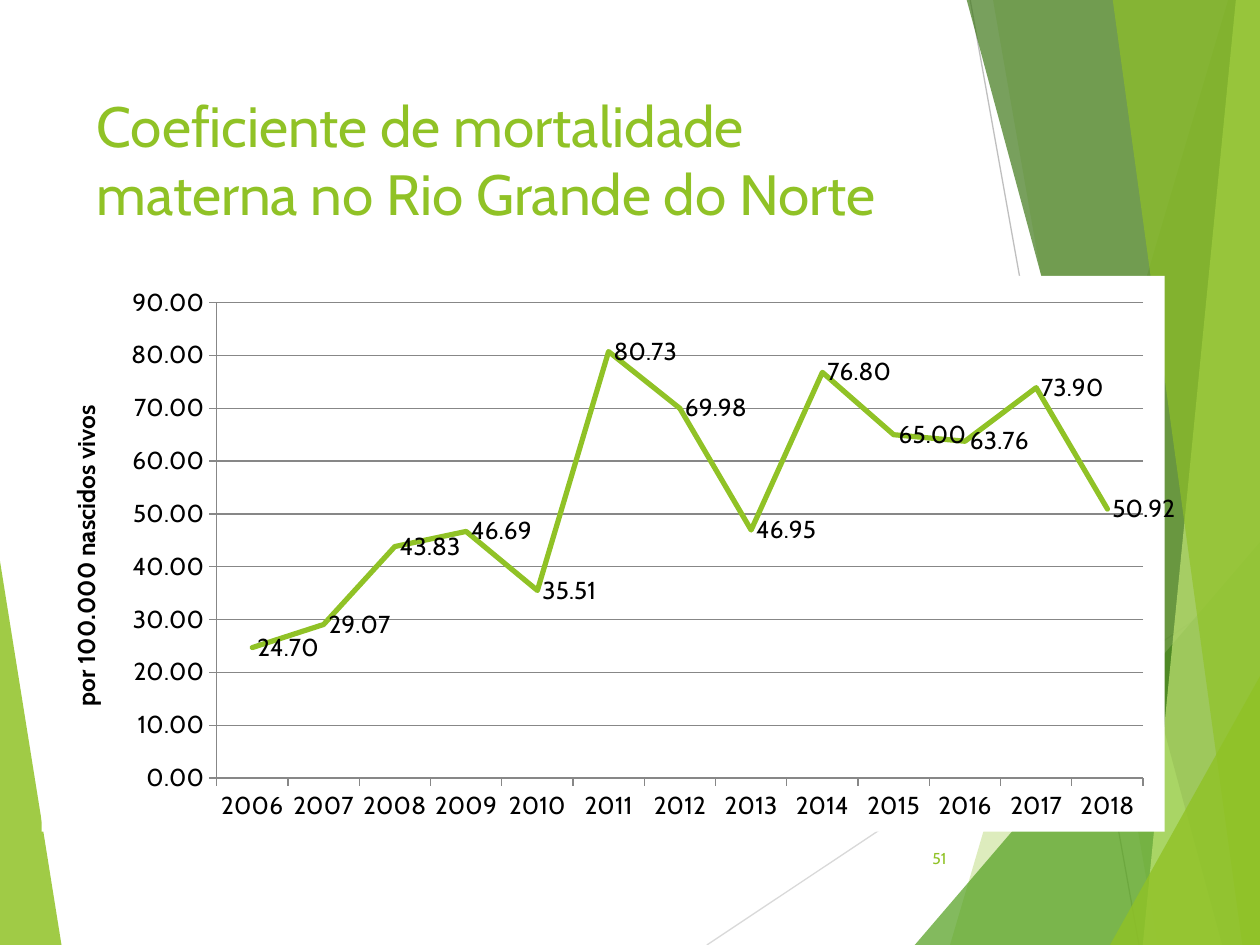
from lxml import etree
from pptx import Presentation
from pptx.chart.data import CategoryChartData as ChartData
from pptx.dml.color import RGBColor as RGB
from pptx.enum.chart import XL_CHART_TYPE as ChartType
from pptx.enum.chart import XL_LABEL_POSITION as LabelPos
from pptx.enum.chart import XL_MARKER_STYLE as Marker
from pptx.enum.chart import XL_TICK_MARK as Tick
from pptx.enum.shapes import MSO_CONNECTOR as Connector
from pptx.enum.text import MSO_ANCHOR as Anchor
from pptx.enum.text import PP_ALIGN as Align
from pptx.oxml import parse_xml
from pptx.oxml.ns import nsdecls, qn
from pptx.util import Inches, Pt

COLORS = {
    "lime": "90C226", "green": "54A021", "forest": "3F7819", "pale": "C0E474",
    "light_gray": "D9D9D9", "mid_gray": "BFBFBF", "axis": "878787",
    "white": "FFFFFF", "black": "000000",
}


class SlideBuilder:
    font = "Cabin"

    def __init__(self, slide):
        self.slide = slide
        self.shapes = slide.shapes

    def color(self, name):
        return RGB.from_string(COLORS[name])

    def facet(self, points, color, opacity):
        """Translucent polygon without outline."""
        corners = [(Inches(x), Inches(y)) for x, y in points]
        builder = self.shapes.build_freeform(*corners[0])
        builder.add_line_segments(corners[1:], close=True)
        facet = builder.convert_to_shape()
        facet.shadow.inherit = False
        facet.line.fill.background()
        facet.fill.solid()
        facet.fill.fore_color.rgb = self.color(color)
        tint = facet.fill._xPr.find(".//" + qn("a:srgbClr"))
        etree.SubElement(tint, qn("a:alpha")).set("val", str(opacity * 1000))

    def line(self, start, end, color):
        ends = [Inches(v) for v in (*start, *end)]
        line = self.shapes.add_connector(Connector.STRAIGHT, *ends)
        line.line.color.rgb = self.color(color)
        line.line.width = Pt(0.75)
        etree.SubElement(line._element.spPr, qn("a:effectLst"))

    def text(self, words, box, size, color, align=Align.LEFT, anchor=Anchor.TOP):
        frame = self.shapes.add_textbox(*[Inches(v) for v in box]).text_frame
        frame.word_wrap = True
        frame.vertical_anchor = anchor
        paragraph = frame.paragraphs[0]
        paragraph.alignment = align
        run = paragraph.add_run()
        run.text = words
        self.style(run.font, size, color)

    def style(self, font, size, color, bold=False):
        font.name, font.size, font.bold = self.font, Pt(size), bold
        font.color.rgb = self.color(color)

    def line_chart(self, points, box, axis_title, plot_area):
        data = ChartData(number_format="0.00")
        data.categories = list(points)
        data.add_series("Series 1", list(points.values()))
        chart = self.shapes.add_chart(
            ChartType.LINE, *[Inches(v) for v in box], data).chart
        chart.has_legend = chart.has_title = False
        self.style(chart.font, 14, "black")

        # Axes
        years, rates = chart.category_axis, chart.value_axis
        for axis in (years, rates):
            axis.major_tick_mark, axis.minor_tick_mark = Tick.OUTSIDE, Tick.NONE
            axis.format.line.color.rgb = self.color("axis")
            axis.format.line.width = Pt(0.75)
        rates.minimum_scale, rates.maximum_scale, rates.major_unit = 0, 90, 10
        rates.tick_labels.number_format = "0.00"
        rates.tick_labels.number_format_is_linked = False
        rates.major_gridlines.format.line.color.rgb = self.color("axis")
        rates.major_gridlines.format.line.width = Pt(0.75)
        title_run = rates.axis_title.text_frame.paragraphs[0].add_run()
        title_run.text = axis_title
        self.style(title_run.font, 14, "black", bold=True)

        # Series and its labels
        plot = chart.plots[0]
        plot.vary_by_categories = False
        series = plot.series[0]
        series.smooth = False
        series.marker.style = Marker.NONE
        series.format.line.color.rgb = self.color("lime")
        series.format.line.width = Pt(3)
        series.format.line._ln.set("cap", "rnd")
        labels = series.data_labels
        labels.show_value = True
        labels.position = LabelPos.RIGHT
        labels.number_format, labels.number_format_is_linked = "0.00", False
        self.style(labels.font, 14, "black")

        # Plot area position and white background
        area = chart._chartSpace.chart.plotArea
        for layout in area.findall(qn("c:layout")):
            area.remove(layout)
        settings = {"layoutTarget": "inner", "xMode": "edge", "yMode": "edge",
                    **plot_area}
        inner = "".join(f'<c:{k} val="{v}"/>' for k, v in settings.items())
        area.insert(0, parse_xml(
            f'<c:layout {nsdecls("c")}><c:manualLayout>{inner}'
            '</c:manualLayout></c:layout>'))
        chart._chartSpace.chart.addnext(parse_xml(
            f'<c:spPr {nsdecls("c", "a")}><a:solidFill><a:srgbClr '
            f'val="{COLORS["white"]}"/></a:solidFill><a:ln><a:noFill/></a:ln></c:spPr>'))


def main():
    deck = Presentation()
    deck.slide_width, deck.slide_height = Inches(10), Inches(7.5)
    page = SlideBuilder(deck.slides.add_slide(deck.slide_layouts[6]))

    # Background facets
    page.facet([(-0.01, 4.39), (0.49, 7.51), (-0.01, 7.5)], "lime", 85)
    page.line((5.61, 7.5), (10.01, 4.57), "light_gray")
    page.line((7.7, 0), (9.04, 7.5), "mid_gray")
    right, top, bottom = 10.01, -0.01, 7.5
    # Full-height bands: top left x, bottom left x, colour, opacity
    bands = [(9.75, 7.54, "lime", 30), (7.88, 9.19, "lime", 20),
             (7.67, 9.7, "forest", 70), (9.81, 9.07, "pale", 70),
             (8.83, 9.86, "lime", 65)]
    # Corner triangles: bottom left x, right edge y, colour, opacity
    low_corner = (7.26, 4.29, "green", 72)
    front_corner = (8.81, 5.35, "lime", 80)

    def add_band(top_x, bottom_x, color, opacity):
        page.facet([(top_x, top), (bottom_x, bottom), (right, bottom),
                    (right, top)], color, opacity)

    def add_corner(bottom_x, edge_y, color, opacity):
        page.facet([(bottom_x, bottom), (right, edge_y), (right, bottom)],
                   color, opacity)

    for band in bands[:2]:
        add_band(*band)
    add_corner(*low_corner)
    for band in bands[2:]:
        add_band(*band)
    add_corner(*front_corner)

    # Title and page number
    page.text("Coeficiente de mortalidade materna no Rio Grande do Norte",
              (0.67, 0.67, 6.94, 1.44), 32.4, "lime")
    page.text("51", (7.05, 6.61, 0.56, 0.4), 9, "lime", Align.RIGHT, Anchor.MIDDLE)

    # Maternal mortality by year
    rates = [24.7, 29.07, 43.83, 46.69, 35.51, 80.73, 69.98, 46.95, 76.8, 65,
             63.76, 73.9, 50.92]
    mortality = {str(year): rate for year, rate in enumerate(rates, 2006)}
    page.line_chart(mortality, (0.33, 2.19, 9, 4.41), "por 100.000 nascidos vivos",
                    {"x": 0.156, "y": 0.048, "w": 0.825, "h": 0.856})

    deck.save("out.pptx")


if __name__ == "__main__":
    main()
